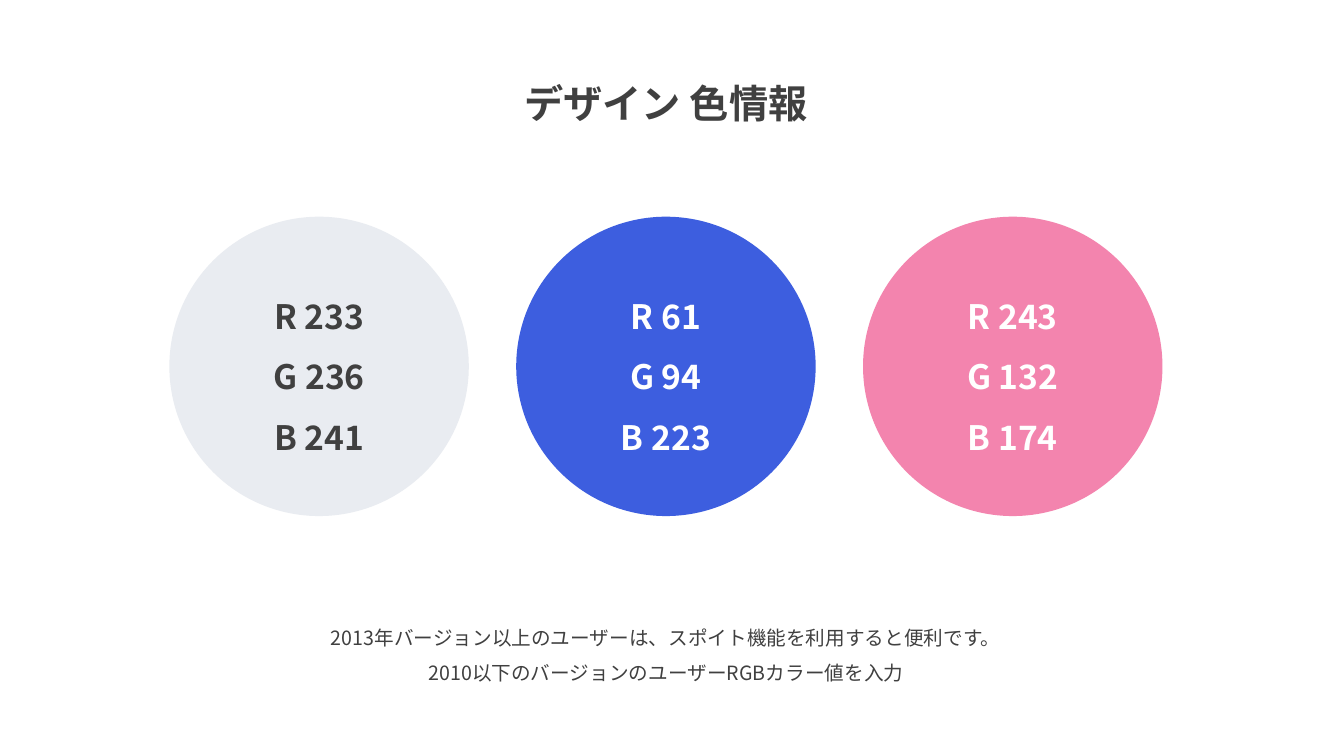
from lxml.etree import SubElement
from pptx import Presentation
from pptx.dml.color import RGBColor
from pptx.enum.shapes import MSO_SHAPE as SHAPE
from pptx.enum.text import MSO_ANCHOR as ANCHOR, MSO_AUTO_SIZE as AUTO_SIZE, PP_ALIGN as ALIGN
from pptx.oxml.ns import qn
from pptx.util import Inches, Pt

FONT = "Noto Sans CJK KR"
COLORS = {
    "gray": "E9ECF1",
    "blue": "3D5EDF",
    "pink": "F384AE",
    "dark": "404040",
    "white": "FFFFFF",
}


def write_lines(frame, lines, size, color, bold=False):
    frame.word_wrap = True
    for index, line in enumerate(lines):
        paragraph = frame.paragraphs[0] if index == 0 else frame.add_paragraph()
        paragraph.alignment = ALIGN.CENTER
        paragraph.line_spacing = 1.5
        run = paragraph.add_run()
        run.text = line
        run.font.size = Pt(size)
        run.font.bold = bold
        run.font.name = FONT
        run.font.color.rgb = RGBColor.from_string(COLORS[color])
        SubElement(run.font._element, qn("a:ea"), typeface=FONT)


presentation = Presentation()
presentation.slide_width = Inches(13.33)
presentation.slide_height = Inches(7.5)
slide = presentation.slides.add_slide(presentation.slide_layouts[6])

diameter = Inches(2.97)
swatches = [("gray", "dark"), ("blue", "white"), ("pink", "white")]
for column, (fill, ink) in enumerate(swatches):
    swatch = slide.shapes.add_shape(
        SHAPE.OVAL, Inches(1.68 + 3.44 * column), Inches(2.15), diameter, diameter
    )
    swatch.shadow.inherit = False
    rgb = RGBColor.from_string(COLORS[fill])
    swatch.fill.solid()
    swatch.fill.fore_color.rgb = rgb
    swatch.line.fill.background()
    swatch.text_frame.vertical_anchor = ANCHOR.MIDDLE
    channels = [f"{letter} {value}" for letter, value in zip("RGB", rgb)]
    write_lines(swatch.text_frame, channels, 24, ink, bold=True)

title = slide.shapes.add_textbox(Inches(4.29), Inches(0.5), Inches(4.63), Inches(0.74))
title.text_frame.auto_size = AUTO_SIZE.SHAPE_TO_FIT_TEXT
write_lines(title.text_frame, ["デザイン 色情報"], 28, "dark", bold=True)

advice = slide.shapes.add_textbox(Inches(2.61), Inches(6.04), Inches(7.99), Inches(0.77))
advice.text_frame.auto_size = AUTO_SIZE.SHAPE_TO_FIT_TEXT
advice_lines = [
    "2013年バージョン以上のユーザーは、スポイト機能を利用すると便利です。",
    "2010以下のバージョンのユーザーRGBカラー値を入力",
]
write_lines(advice.text_frame, advice_lines, 14, "dark")

presentation.save("out.pptx")
